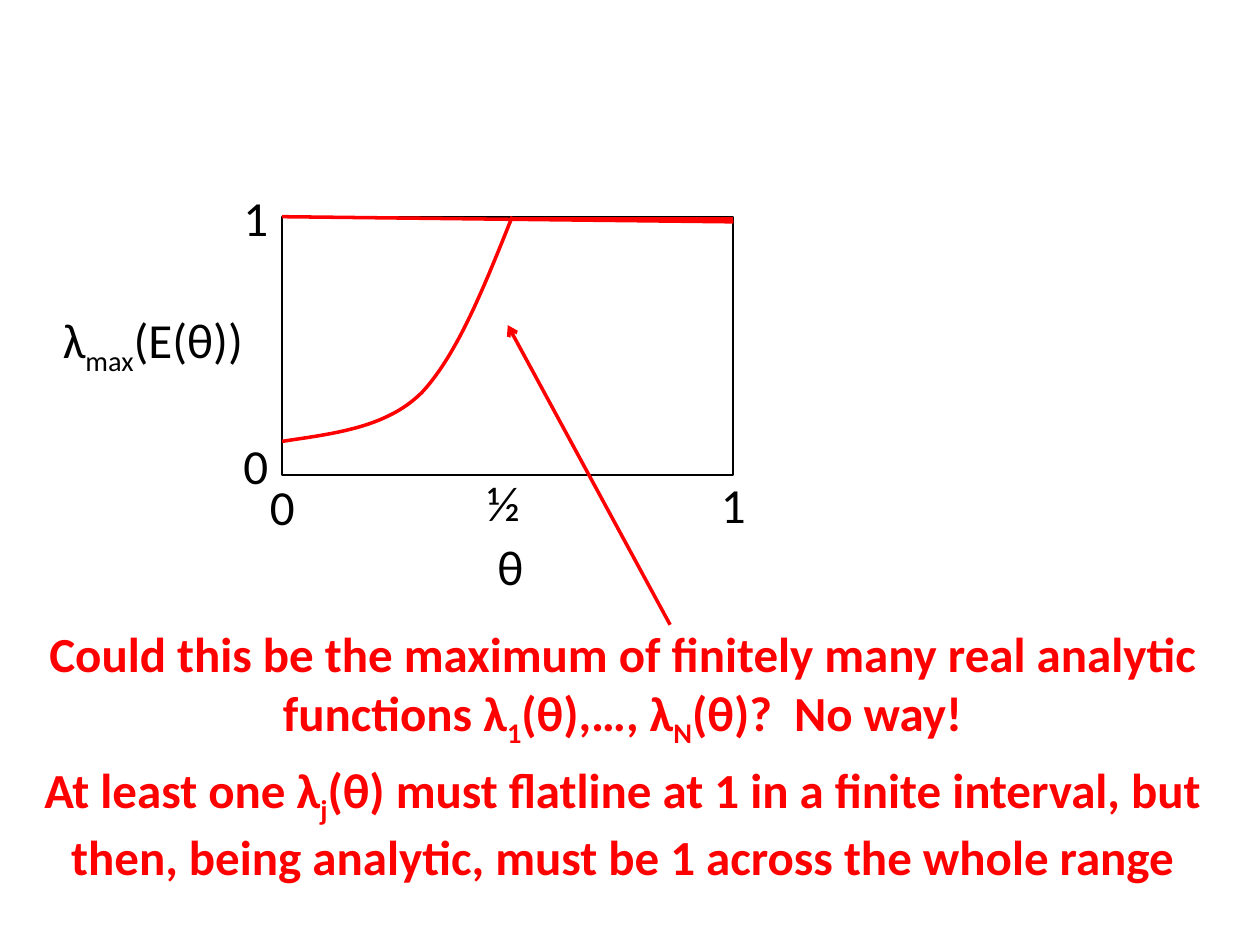
import pptx
import pptx.util
import pptx.dml.color
import pptx.enum.shapes
import pptx.enum.text
import pptx.oxml.ns
import lxml.etree

COLORS = {"ink": "000000", "red": "FF0000"}
UNIT = pptx.util.Inches(0.1)  # the slide is a grid of 100 columns by 75 rows
FONT = {"name": "Calibri", "size": pptx.util.Pt(28)}
MID = pptx.enum.text.PP_ALIGN.CENTER
LEFT = pptx.enum.text.PP_ALIGN.LEFT
qn = pptx.oxml.ns.qn


def grid(*cells):
    return [round(cell * UNIT) for cell in cells]


def place(box, x, y):
    """Turn shares of a box into grid columns and rows."""
    left, top, width, height = box
    return left + x * width, top + y * height


def tint(color):
    return pptx.dml.color.RGBColor.from_string(COLORS[color])


def stroke(shape, color, width):
    shape.line.color.rgb = tint(color)
    shape.line.width = pptx.util.Pt(width)


def write(slide, box, paras, color="ink", align=MID, wrap=True, bold=False):
    """Each paragraph is a list of parts; every second part is a subscript."""
    frame = slide.shapes.add_textbox(*grid(*box)).text_frame
    frame.word_wrap = wrap
    for i, parts in enumerate(paras):
        para = frame.paragraphs[0] if i == 0 else frame.add_paragraph()
        para.alignment = align
        if align == MID:
            gap = lxml.etree.SubElement(para._p.get_or_add_pPr(), qn("a:spcBef"))
            lxml.etree.SubElement(gap, qn("a:spcPct"), val="20000")
        for j, part in enumerate(parts):
            run = para.add_run()
            run.text = part
            for key, value in {**FONT, "bold": bold}.items():
                setattr(run.font, key, value)
            run.font.color.rgb = tint(color)
            if j % 2:
                run.font._element.set("baseline", "-25000")


def link(slide, box, start, end, arrow=False):
    ends = grid(*place(box, *start), *place(box, *end))
    line = slide.shapes.add_connector(pptx.enum.shapes.MSO_CONNECTOR.STRAIGHT, *ends)
    stroke(line, "red", 2)
    if arrow:
        lxml.etree.SubElement(line.line._get_or_add_ln(), qn("a:tailEnd"), type="arrow")
    lxml.etree.SubElement(line._element.spPr, qn("a:effectLst"))


def bezier(knots, steps=24):
    """Points along one cubic curve, without its first point."""
    for i in range(1, steps + 1):
        t = i / steps
        shares = ((1 - t) ** 3, 3 * t * (1 - t) ** 2, 3 * t * t * (1 - t), t ** 3)
        yield tuple(sum(s * k[axis] for s, k in zip(shares, knots)) for axis in (0, 1))


def draw_curve(slide, box):
    knots = [(0, 0.87), (0.11, 0.84), (0.23, 0.82), (0.31, 0.68),
             (0.39, 0.53), (0.45, 0.26), (0.51, 0)]
    points = [*bezier(knots[:4]), *bezier(knots[3:])]
    path = slide.shapes.build_freeform(*grid(*place(box, *knots[0])))
    path.add_line_segments([grid(*place(box, *p)) for p in points], close=False)
    curve = path.convert_to_shape()
    curve.shadow.inherit = False
    curve.fill.background()
    stroke(curve, "red", 2)


def draw_plot(slide, box):
    # Frame
    frame = slide.shapes.add_shape(pptx.enum.shapes.MSO_SHAPE.RECTANGLE, *grid(*box))
    frame.shadow.inherit = False
    frame.fill.background()
    stroke(frame, "ink", 1)

    # Axis labels: text, columns and rows from the corner, width
    left, top = box[:2]
    labels = [("0", -2.1, 20.1, 4.2), ("1", 33.7, 20, 4.2),
              ("0", -4.2, 16.9, 4.2), ("1", -4.2, -2.8, 4.2),
              ("½ ", 14.5, 19.8, 7), ("θ", 14.6, 24.9, 7)]
    for text, col, row, width in labels:
        write(slide, (left + col, top + row, width, 7.5), [[text]])
    write(slide, (left - 18.4, top + 6.9, 17.4, 5.7),
          [["λ", "max", "(E(θ))"]], align=LEFT, wrap=False)

    # Curve, flat lines and pointer
    draw_curve(slide, box)
    link(slide, box, (0.51, 0.01), (1, 0.01))
    link(slide, box, (0.86, 1.58), (0.5, 0.42), arrow=True)
    link(slide, box, (0, 0), (1, 0.02))


def draw_claim(slide, box):
    write(slide, box, [
        ["Could this be the maximum of finitely many real analytic functions λ",
         "1", "(θ),…, λ", "N", "(θ)?  No way!"],
        ["At least one λ", "j", "(θ) must flatline at 1 in a finite interval, "
         "but then, being analytic, must be 1 across the whole range"],
    ], color="red", bold=True)


def main():
    deck = pptx.Presentation()
    deck.slide_width, deck.slide_height = grid(100, 75)
    slide = deck.slides.add_slide(deck.slide_layouts[6])
    draw_plot(slide, (22.4, 17.2, 35.8, 20.5))
    draw_claim(slide, (1.5, 49, 95.8, 7.5))
    deck.save("out.pptx")


if __name__ == "__main__":
    main()
